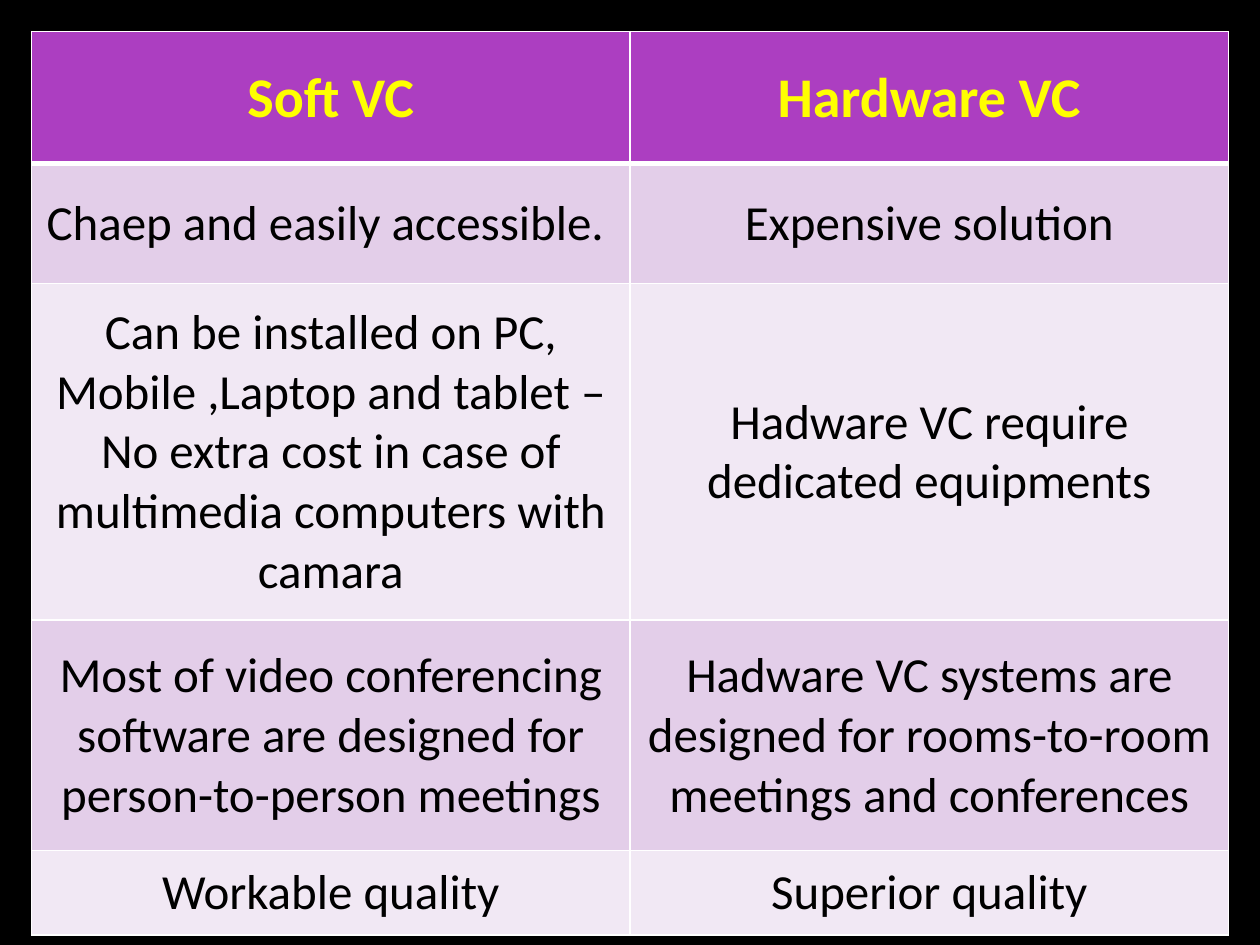
from lxml import etree
from pptx import Presentation
from pptx.dml.color import RGBColor
from pptx.enum import text as t
from pptx.oxml.ns import qn
from pptx.util import Pt

BLACK = RGBColor(0, 0, 0)
WHITE = RGBColor(255, 255, 255)
YELLOW = RGBColor(255, 255, 0)
PURPLE = RGBColor(0xAC, 0x3E, 0xC1)
LILAC = RGBColor(0xE3, 0xCE, 0xE9)
PALE = RGBColor(0xF1, 0xE8, 0xF4)

ROWS = [
    ("Soft VC", "Hardware VC"),
    ("Chaep and easily accessible. ", "Expensive solution"),
    ("Can be installed on PC, Mobile ,Laptop and tablet – No extra cost "
     "in case of multimedia computers with camara",
     "Hadware VC require dedicated equipments"),
    ("Most of video conferencing software are designed for "
     "person-to-person meetings",
     "Hadware VC systems are designed for rooms-to-room meetings "
     "and conferences"),
    ("Workable quality", "Superior quality"),
]
HEIGHTS = [75.6, 68.4, 192.24, 131.76, 48.24]


def add_edges(cell, top, bottom):
    """Draw white borders; top and bottom are line widths in points."""
    props = cell._tc.get_or_add_tcPr()
    for side, width in zip("LRTB", (1, 1, top, bottom)):
        line = etree.SubElement(props, qn(f"a:ln{side}"), w=str(Pt(width)))
        fill = etree.SubElement(line, qn("a:solidFill"))
        etree.SubElement(fill, qn("a:srgbClr"), val=str(WHITE))


def fill_cell(cell, words, row):
    head = row == 0
    add_edges(cell, 3 if row == 1 else 1, 3 if head else 1)
    cell.fill.solid()
    cell.fill.fore_color.rgb = PURPLE if head else LILAC if row % 2 else PALE
    cell.margin_left = cell.margin_right = cell.margin_top = Pt(0.72)
    cell.margin_bottom = Pt(0)
    cell.vertical_anchor = t.MSO_ANCHOR.MIDDLE
    cell.text = words
    par = cell.text_frame.paragraphs[0]
    par.alignment = t.PP_ALIGN.CENTER
    font = par.font
    font.name = "Calibri"
    font.size = Pt(32 if head else 28)
    font.bold = head
    font.color.rgb = YELLOW if head else BLACK


def add_grid(slide, left, top, width):
    """Place the comparison table with equal columns."""
    count = len(ROWS[0])
    table = slide.shapes.add_table(
        len(ROWS), count, Pt(left), Pt(top), Pt(width), Pt(sum(HEIGHTS))).table
    for col in table.columns:
        col.width = Pt(width / count)
    for r, (height, row) in enumerate(zip(HEIGHTS, ROWS)):
        table.rows[r].height = Pt(height)
        for c, words in enumerate(row):
            fill_cell(table.cell(r, c), words, r)


def main():
    deck = Presentation()
    deck.slide_width, deck.slide_height = Pt(720), Pt(540)
    slide = deck.slides.add_slide(deck.slide_layouts[6])
    # Black background
    back = slide.background.fill
    back.solid()
    back.fore_color.rgb = BLACK
    # Comparison table
    add_grid(slide, 18, 18, 684)
    deck.save("out.pptx")


if __name__ == "__main__":
    main()
